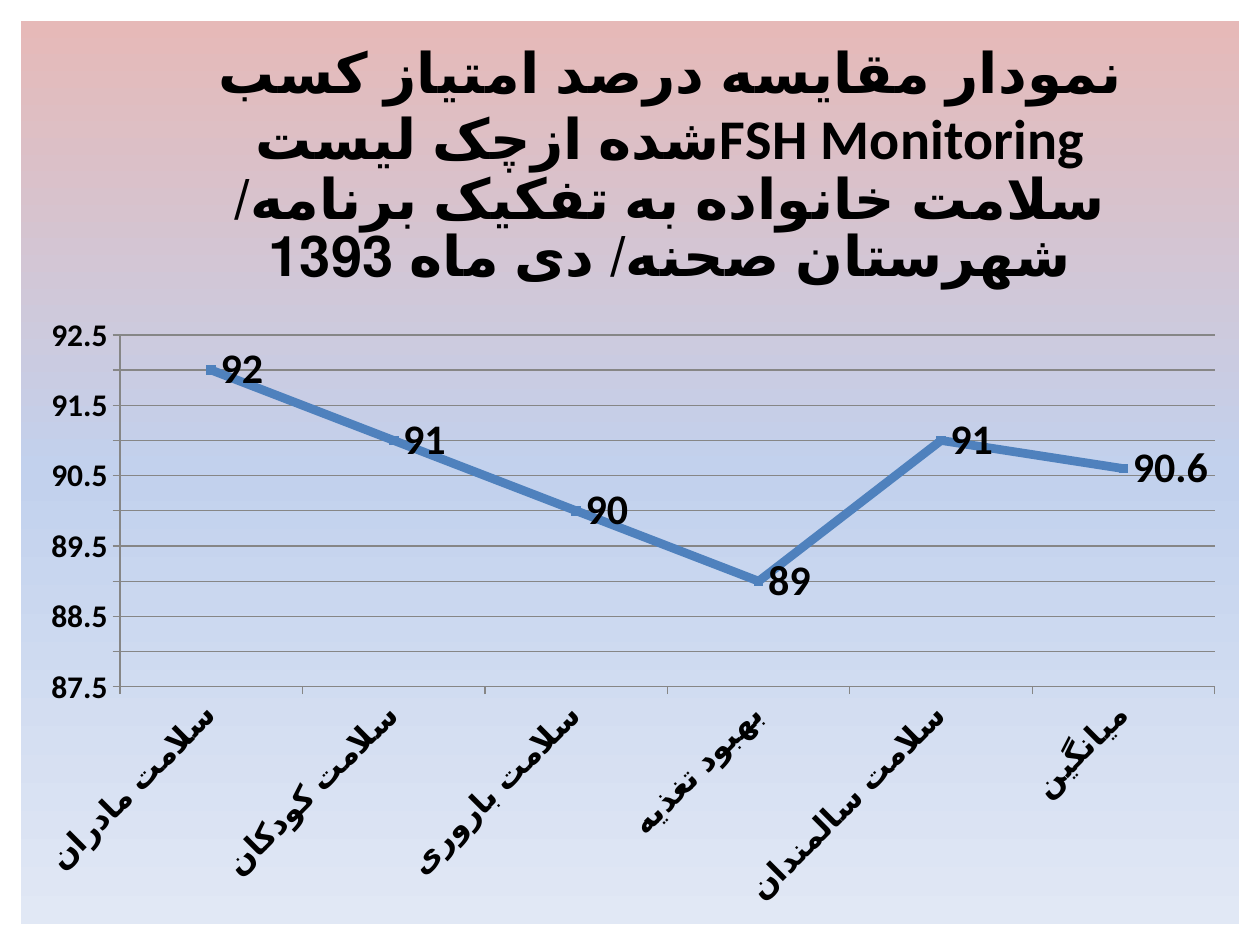
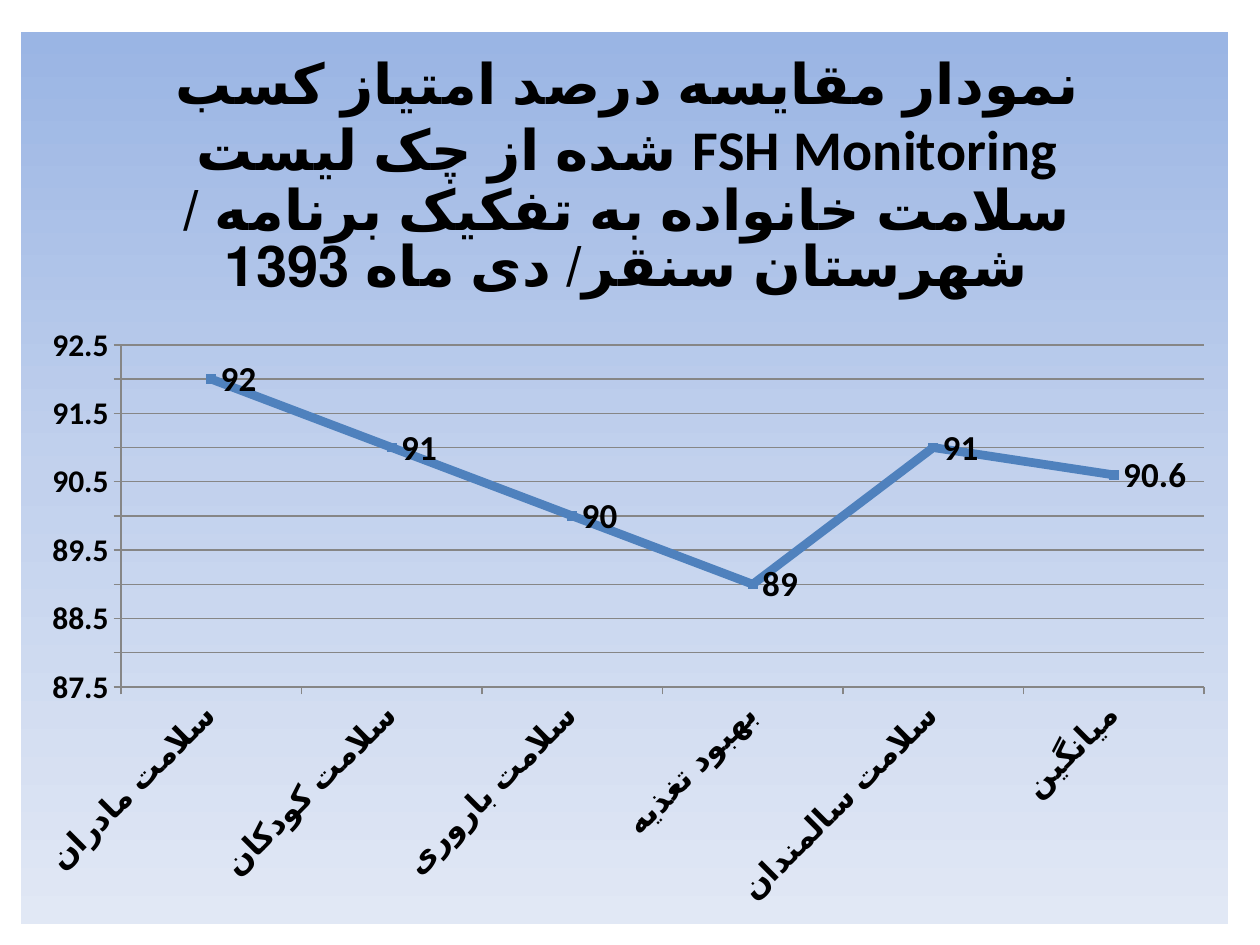
from pptx import Presentation
from pptx import util as u
from pptx.chart.data import CategoryChartData
from pptx.dml.color import RGBColor
from pptx.enum import chart as ce
from pptx.oxml import parse_xml
from pptx.oxml.ns import nsdecls, qn

# Shared look
BLACK = RGBColor(0x00, 0x00, 0x00)
BLUE = RGBColor(0x4F, 0x81, 0xBD)
GREY = RGBColor(0x86, 0x86, 0x86)
ROSE = RGBColor(0xE6, 0xB9, 0xB8)
SKY = RGBColor(0x9A, 0xB5, 0xE4)
PALE = RGBColor(0xC2, 0xD1, 0xED)
MIST = RGBColor(0xE1, 0xE8, 0xF5)
FONT = "Calibri"
PX = 914400 / 126

PROGRAMS = ["سلامت مادران", "سلامت کودکان", "سلامت باروری",
            "بهبود تغذیه", "سلامت سالمندان", "میانگین"]
SCORES = [92, 91, 90, 89, 91, 90.6]

# One entry per county; boxes are left, top, width, height in px,
# title and plot measured from the corner of the chart
COUNTIES = [
    dict(title="نمودار مقایسه درصد امتیاز کسب شده ازچک لیستFSH Monitoring "
               "سلامت خانواده به تفکیک برنامه/ شهرستان صحنه/ دی ماه 1393",
         box=(21, 21, 1218, 903), title_at=(186, 11),
         plot=(99, 314, 1095, 352), top_color=ROSE, label_size=24),
    dict(title="نمودار مقایسه درصد امتیاز کسب شده از چک لیست FSH Monitoring "
               "سلامت خانواده به تفکیک برنامه / شهرستان سنقر/ دی ماه 1393",
         box=(21, 32, 1207, 892), title_at=(143, 11),
         plot=(100, 313, 1083, 342), top_color=SKY, label_size=20),
]


def px(n):
    return u.Emu(round(n * PX))


def manual_layout(place, size, inner=False):
    """Layout element for a place in px inside a chart of the given size."""
    target = '<c:layoutTarget val="inner"/>' if inner else ""
    modes = "".join(f'<c:{m}Mode val="edge"/>' for m in "xy")
    parts = "".join(f'<c:{name} val="{n / size[i % 2]:.4f}"/>'
                    for i, (name, n) in enumerate(zip("xywh", place)))
    return parse_xml(f'<c:layout {nsdecls("c")}><c:manualLayout>'
                     f'{target}{modes}{parts}</c:manualLayout></c:layout>')


prs = Presentation()
prs.slide_width, prs.slide_height = px(1260), px(945)

for county in COUNTIES:
    slide = prs.slides.add_slide(prs.slide_layouts[6])
    data = CategoryChartData()
    data.categories = PROGRAMS
    data.add_series("Series 1", SCORES)
    chart = slide.shapes.add_chart(ce.XL_CHART_TYPE.LINE_MARKERS,
                                   *map(px, county["box"]), data).chart
    size = county["box"][2:]
    chart.has_legend = False
    chart.font.name, chart.font.size = FONT, u.Pt(10)
    chart.font.bold, chart.font.color.rgb = True, BLACK

    # Title
    chart.has_title = True
    heading = chart.chart_title.text_frame
    heading.text = county["title"]
    heading_font = heading.paragraphs[0].runs[0].font
    heading_font.name, heading_font.size = FONT, u.Pt(32)
    heading_font.bold, heading_font.color.rgb = True, BLACK
    chart.chart_title.include_in_layout = False

    # Axes and gridlines
    programs, percent = chart.category_axis, chart.value_axis
    percent.minimum_scale, percent.maximum_scale = 87.5, 92.5
    percent.major_unit = 0.5
    percent.has_major_gridlines = True
    for axis in (programs, percent):
        axis.major_tick_mark = ce.XL_TICK_MARK.OUTSIDE
        axis.minor_tick_mark = ce.XL_TICK_MARK.NONE
        axis.tick_labels.font.size = u.Pt(18)
        axis.tick_labels.font.bold = True
    for rule in (programs.format, percent.format, percent.major_gridlines.format):
        rule.line.color.rgb, rule.line.width = GREY, u.Pt(0.75)

    # Score line with its labels
    plot = chart.plots[0]
    plot.vary_by_categories = False
    scores = plot.series[0]
    scores.smooth = False
    scores.format.line.color.rgb, scores.format.line.width = BLUE, u.Pt(5)
    scores.marker.style, scores.marker.size = ce.XL_MARKER_STYLE.SQUARE, 5
    scores.marker.format.fill.solid()
    scores.marker.format.fill.fore_color.rgb = BLUE
    scores.marker.format.line.color.rgb = BLUE
    labels = scores.data_labels
    labels.show_value = True
    labels.position = ce.XL_LABEL_POSITION.RIGHT
    labels.font.size, labels.font.bold = u.Pt(county["label_size"]), True
    labels.font.color.rgb = BLACK

    # Slanted category names
    space = chart.element
    slant = space.find(".//" + qn("c:catAx")).find(qn("c:txPr")).find(qn("a:bodyPr"))
    slant.set("rot", "-2700000")

    # Places of the title and the plot
    title_part = space.find(".//" + qn("c:title"))
    plot_part = space.find(".//" + qn("c:plotArea"))
    for part in (title_part, plot_part):
        for old in part.findall(qn("c:layout")):
            part.remove(old)
    title_part.find(qn("c:tx")).addnext(manual_layout(county["title_at"], size))
    plot_part.insert(0, manual_layout(county["plot"], size, inner=True))

    # Gradient background
    stops = "".join(f'<a:gs pos="{pos}"><a:srgbClr val="{color}"/></a:gs>'
                    for pos, color in ((0, county["top_color"]),
                                       (50000, PALE), (100000, MIST)))
    space.find(qn("c:chart")).addnext(parse_xml(
        f'<c:spPr {nsdecls("c", "a")}><a:gradFill><a:gsLst>{stops}</a:gsLst>'
        '<a:lin ang="5400000" scaled="0"/></a:gradFill>'
        '<a:ln><a:noFill/></a:ln></c:spPr>'))

prs.save("out.pptx")
